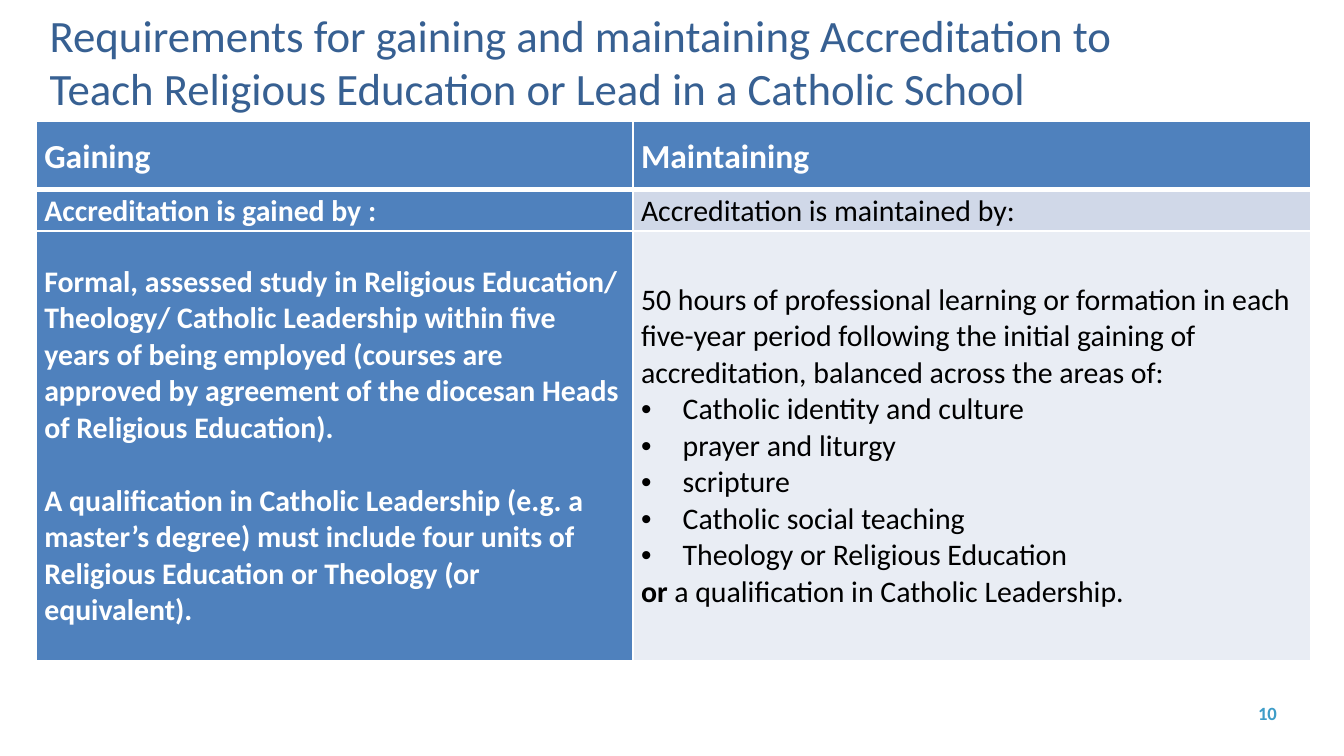
import pptx
import pptx.dml.color
import pptx.enum.text
import pptx.oxml
import pptx.oxml.ns
import pptx.util

COLORS = {
    "title": "376092",
    "accent": "4F81BD",
    "band": "D0D8E8",
    "pale": "E9EDF4",
    "white": "FFFFFF",
    "black": "000000",
    "number": "3E9DC8",
}
ALIGN = pptx.enum.text.PP_ALIGN
MIDDLE = pptx.enum.text.MSO_ANCHOR.MIDDLE
FONT = "Calibri"
BODY_SIZE = 16
BULLET_INDENT = 0.31
SLIDE_WIDTH = 10

TITLE_LINES = [
    "Requirements for gaining and maintaining Accreditation to",
    "Teach Religious Education or Lead in a Catholic School",
]
GAINING = [
    "Formal, assessed study in Religious Education/ Theology/ Catholic Leadership "
    "within five years of being employed (courses are approved by agreement of the "
    "diocesan Heads of Religious Education).",
    "A qualification in Catholic Leadership (e.g. a master’s degree) must include "
    "four units of Religious Education or Theology (or equivalent).",
]
MAINTAINING = (
    "50 hours of professional learning or formation in each five-year period "
    "following the initial gaining of accreditation, balanced across the areas of:"
)
AREAS = [
    "Catholic identity and culture",
    "prayer and liturgy",
    "scripture",
    "Catholic social teaching",
    "Theology or Religious Education",
]


def rgb(name):
    return pptx.dml.color.RGBColor.from_string(COLORS[name])


def add_bullet(paragraph):
    properties = paragraph._p.get_or_add_pPr()
    indent = pptx.util.Inches(BULLET_INDENT)
    properties.set("marL", str(indent))
    properties.set("indent", str(-indent))
    namespace = pptx.oxml.ns.nsdecls("a")
    properties.append(pptx.oxml.parse_xml(f'<a:buFont {namespace} typeface="Arial"/>'))
    properties.append(pptx.oxml.parse_xml(f'<a:buChar {namespace} char="•"/>'))


def write(frame, runs, *, size=BODY_SIZE, color="black", bold=False, first=False,
          align=ALIGN.LEFT, spacing=1.0, before=0, bullet=False):
    paragraph = frame.paragraphs[0] if first else frame.add_paragraph()
    paragraph.alignment = align
    paragraph.line_spacing = spacing
    paragraph.space_before = pptx.util.Pt(before)
    if bullet:
        add_bullet(paragraph)
    if isinstance(runs, str):
        runs = [(runs, bold)]
    for text, run_bold in runs:
        run = paragraph.add_run()
        run.text = text
        run.font.name = FONT
        run.font.size = pptx.util.Pt(size)
        run.font.bold = run_bold
        run.font.color.rgb = rgb(color)


def add_title(slide, box):
    title = slide.shapes.title
    title.left, title.top, title.width, title.height = map(pptx.util.Inches, box)
    frame = title.text_frame
    frame.word_wrap = False
    frame.auto_size = pptx.enum.text.MSO_AUTO_SIZE.NONE
    frame.vertical_anchor = MIDDLE
    for index, line in enumerate(TITLE_LINES):
        write(frame, line, size=24, color="title", first=index == 0)


def set_borders(cell, top, bottom):
    properties = cell._tc.get_or_add_tcPr()
    widths = {"lnL": 1, "lnR": 1, "lnT": top, "lnB": bottom}
    for index, (tag, width) in enumerate(widths.items()):
        properties.insert(index, pptx.oxml.parse_xml(
            f'<a:{tag} {pptx.oxml.ns.nsdecls("a")} w="{pptx.util.Pt(width)}"><a:solidFill>'
            f'<a:srgbClr val="{COLORS["white"]}"/></a:solidFill></a:{tag}>'))


def add_requirements_table(slide, box):
    column_widths = [4.44, 5.04]
    row_heights = [0.51, 0.31, 3.2]
    fills = [("accent", "accent"), ("accent", "band"), ("accent", "pale")]
    table = slide.shapes.add_table(3, 2, *map(pptx.util.Inches, box)).table
    for column, width in zip(table.columns, column_widths):
        column.width = pptx.util.Inches(width)
    for row, height in zip(table.rows, row_heights):
        row.height = pptx.util.Inches(height)
    for row_index, row_fills in enumerate(fills):
        for column_index, fill in enumerate(row_fills):
            cell = table.cell(row_index, column_index)
            cell.fill.solid()
            cell.fill.fore_color.rgb = rgb(fill)
            cell.margin_left = cell.margin_right = pptx.util.Inches(0.06)
            cell.margin_top = cell.margin_bottom = 0
            cell.vertical_anchor = MIDDLE
            set_borders(cell, top=3 if row_index == 1 else 1,
                        bottom=3 if row_index == 0 else 1)

    def frame(row, column):
        return table.cell(row, column).text_frame

    strong = {"color": "white", "bold": True}
    for column, heading in enumerate(["Gaining", "Maintaining"]):
        write(frame(0, column), heading, size=18, first=True, spacing=1.07, **strong)
    write(frame(1, 0), "Accreditation is gained by :", first=True, spacing=1.07, **strong)
    write(frame(1, 1), "Accreditation is maintained by:", first=True, spacing=1.07)

    for index, text in enumerate(GAINING):
        write(frame(2, 0), text, first=index == 0, before=19.5 * index, **strong)

    maintaining = frame(2, 1)
    write(maintaining, MAINTAINING, first=True)
    for area in AREAS:
        write(maintaining, area, bullet=True)
    write(maintaining, [("or", True), (" a qualification in Catholic Leadership.", False)])


def add_page_number(slide, box):
    frame = slide.shapes.add_textbox(*map(pptx.util.Inches, box)).text_frame
    frame.word_wrap = True
    frame.margin_left = frame.margin_right = frame.margin_top = frame.margin_bottom = 0
    write(frame, "10", size=10, color="number", bold=True, first=True, align=ALIGN.RIGHT)


def main():
    presentation = pptx.Presentation()
    presentation.slide_width = pptx.util.Inches(SLIDE_WIDTH)
    presentation.slide_height = pptx.util.Inches(SLIDE_WIDTH * 9 / 16)
    slide = presentation.slides.add_slide(presentation.slide_layouts[5])
    add_page_number(slide, (7.11, 5.22, 2.39, 0.17))
    add_requirements_table(slide, (0.27, 0.9, 9.48, 4.02))
    add_title(slide, (0.27, 0, 8.25, 0.91))
    presentation.save("out.pptx")


if __name__ == "__main__":
    main()
